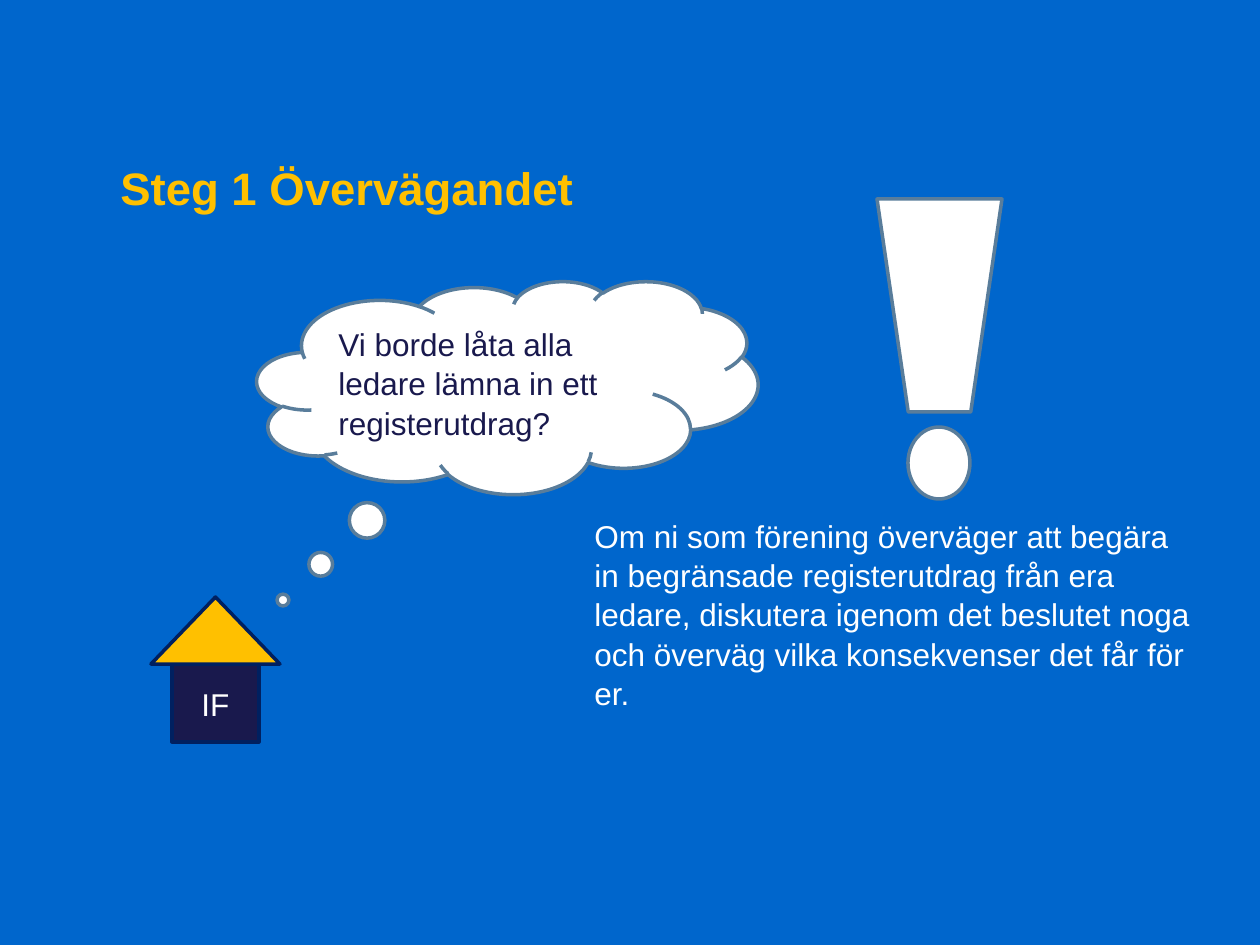
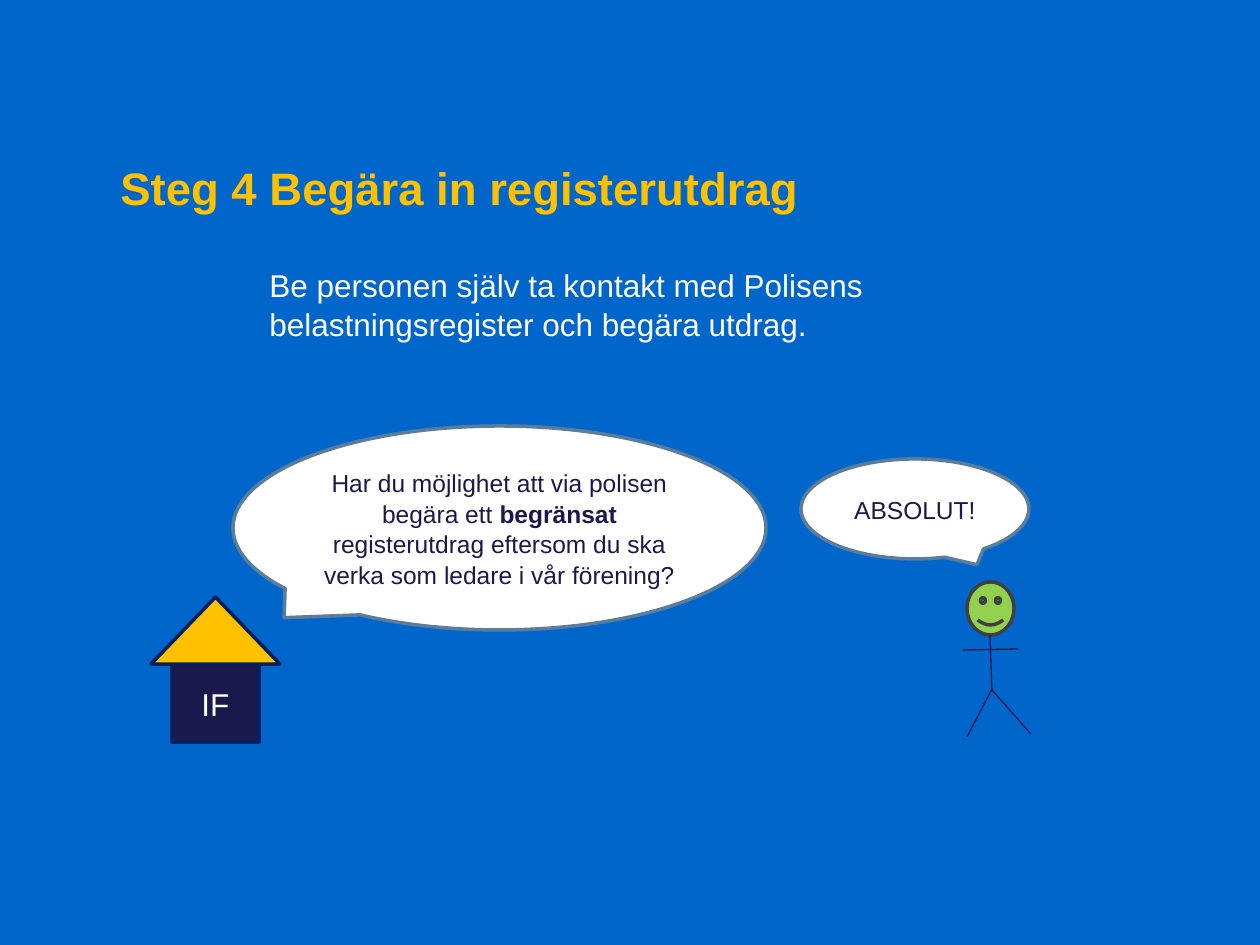
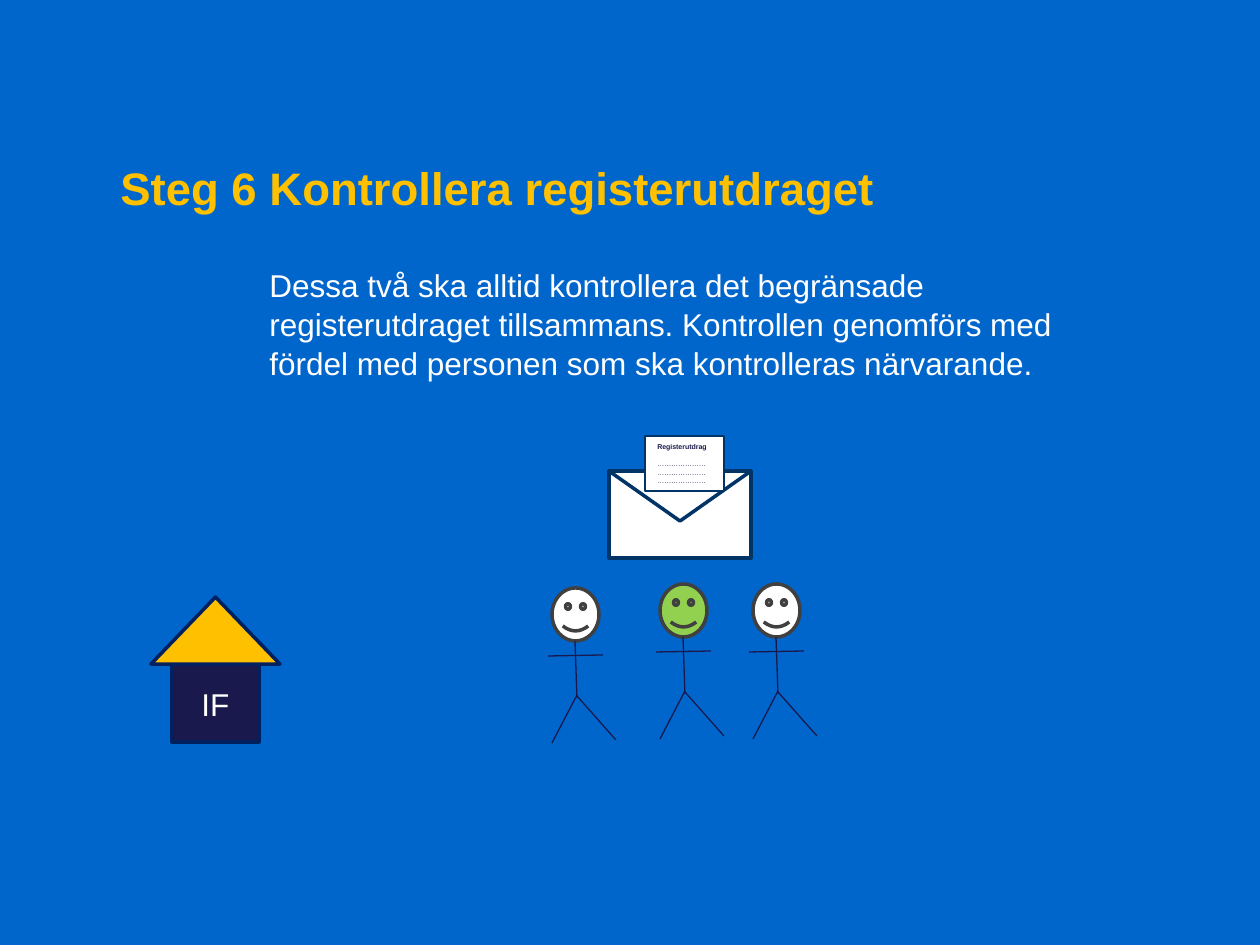
import lxml.etree
import pptx
import pptx.dml.color
import pptx.enum.shapes
import pptx.enum.text
import pptx.oxml.ns
import pptx.util

PX_PER_INCH = 126
SLIDE_BOX = (0, 0, 1260, 945)
TITLE_BOX = (108, 147, 984, 78)
HOUSE_BOX = (151, 597, 129, 145)

BLUE = "0066CC"
NAVY = "19194D"
HOUSE_EDGE = "002060"
YELLOW = "FFC000"
WHITE = "FFFFFF"
GREEN = "92D050"
STEEL = "597D9B"
GRAY = "404040"
ENVELOPE_EDGE = "003366"

LINE_SPACING = 1.04
FONT = "Arial"
BODY = {"size": 18, "color": WHITE}
TITLE = {"size": 26, "color": YELLOW, "bold": True}
THOUGHT = {"size": 18, "color": NAVY}
SPEECH = {"size": 14, "color": NAVY}

SHAPES = pptx.enum.shapes.MSO_SHAPE
ANCHORS = pptx.enum.text.MSO_ANCHOR
ALIGNMENTS = pptx.enum.text.PP_ALIGN


def px(length):
    return pptx.util.Emu(round(length * pptx.util.Inches(1) / PX_PER_INCH))


def color(hex_string):
    return pptx.dml.color.RGBColor.from_string(hex_string)


def write(shape, paragraphs, style, alignment=ALIGNMENTS.LEFT,
          anchor=ANCHORS.TOP, space_before=0):
    """Fill a shape with paragraphs, each a list of (text, format changes) runs."""
    frame = shape.text_frame
    frame.word_wrap = True
    frame.vertical_anchor = anchor
    for index, runs in enumerate(paragraphs):
        paragraph = frame.add_paragraph() if index else frame.paragraphs[0]
        paragraph.alignment = alignment
        paragraph.line_spacing = LINE_SPACING
        if index:
            paragraph.space_before = pptx.util.Pt(space_before)
        for text, changes in runs:
            run = paragraph.add_run()
            run.text = text
            values = {**style, **changes}
            run.font.color.rgb = color(values.pop("color"))
            values["size"] = pptx.util.Pt(values["size"])
            for name, value in {"name": FONT, **values}.items():
                setattr(run.font, name, value)


def add_outlined(shapes, kind, box, fill, edge, width=2, rotation=0, adjustments=()):
    shape = shapes.add_shape(kind, *map(px, box))
    shape.shadow.inherit = False
    shape.fill.solid()
    shape.fill.fore_color.rgb = color(fill)
    shape.line.color.rgb = color(edge)
    shape.line.width = pptx.util.Pt(width)
    shape.rotation = rotation
    for index, value in enumerate(adjustments):
        shape.adjustments[index] = value
    return shape


def add_limb(shapes, start, end):
    limb = shapes.add_connector(
        pptx.enum.shapes.MSO_CONNECTOR.STRAIGHT, *map(px, start + end))
    limb.line.color.rgb = color(NAVY)
    limb.line.width = pptx.util.Pt(0.75)
    properties = limb.element.find(pptx.oxml.ns.qn("p:spPr"))
    lxml.etree.SubElement(properties, pptx.oxml.ns.qn("a:effectLst"))


def add_text(slide, box, text, style=BODY, anchor=ANCHORS.TOP):
    text_box = slide.shapes.add_textbox(*map(px, box))
    write(text_box, [[(text, {})]], style, anchor=anchor)


def add_house(slide, box):
    left, top, width, height = box
    roof_height = 67
    wall_inset = 21
    shapes = slide.shapes.add_group_shape().shapes
    wall_box = (left + wall_inset, top + roof_height,
                width - 2 * wall_inset, height - roof_height)
    wall = add_outlined(shapes, SHAPES.RECTANGLE, wall_box, NAVY, HOUSE_EDGE)
    write(wall, [[("IF", {})]], BODY, ALIGNMENTS.CENTER, ANCHORS.MIDDLE)
    add_outlined(shapes, SHAPES.ISOSCELES_TRIANGLE,
                 (left, top, width, roof_height), YELLOW, HOUSE_EDGE)


def add_bubble(slide, kind, box, tail, runs, style, alignment=ALIGNMENTS.CENTER):
    bubble = add_outlined(slide.shapes, kind, box, WHITE, STEEL, adjustments=tail)
    write(bubble, [runs], style, alignment, ANCHORS.MIDDLE)


def add_exclamation_mark(slide, box):
    left, top, width, height = box
    dot_width, dot_height = 62, 72
    shapes = slide.shapes.add_group_shape().shapes
    add_outlined(shapes, SHAPES.TRAPEZOID, (left, top, width, 213),
                 WHITE, STEEL, rotation=180)
    dot_box = (left + (width - dot_width) // 2, top + height - dot_height,
               dot_width, dot_height)
    add_outlined(shapes, SHAPES.OVAL, dot_box, WHITE, STEEL)


def add_stick_figure(slide, left, top, face_color):
    shapes = slide.shapes.add_group_shape().shapes
    add_outlined(shapes, SHAPES.SMILEY_FACE, (left + 4, top, 47, 53), face_color, GRAY)
    limbs = {
        "spine": ((27, 53), (29, 110)),
        "left leg": ((29, 107), (4, 155)),
        "right leg": ((29, 108), (68, 152)),
        "arms": ((0, 68), (55, 67)),
    }
    for start, end in limbs.values():
        add_limb(shapes, (left + start[0], top + start[1]), (left + end[0], top + end[1]))


def add_envelope(slide, box):
    left, top, width, height = box
    paper_rise = 35
    shapes = slide.shapes.add_group_shape().shapes
    pocket_top = top + paper_rise
    add_outlined(shapes, SHAPES.RECTANGLE,
                 (left, pocket_top, width, height - paper_rise), WHITE, ENVELOPE_EDGE)
    add_outlined(shapes, SHAPES.ISOSCELES_TRIANGLE, (left, pocket_top, width, 50),
                 WHITE, ENVELOPE_EDGE, rotation=180)
    paper = add_outlined(shapes, SHAPES.RECTANGLE, (left + 36, top, 79, 55),
                         WHITE, ENVELOPE_EDGE, width=0.75)
    write(paper, [[("Registerutdrag", {"bold": True})], [("………………………………………………………", {})]],
          {"size": 4, "color": NAVY}, space_before=4.8)


def add_step_slide(presentation, title):
    """Add a slide with the background, title and house that every step shares."""
    slide = presentation.slides.add_slide(presentation.slide_layouts[6])
    slide.background.fill.solid()
    slide.background.fill.fore_color.rgb = color(BLUE)
    add_text(slide, TITLE_BOX, title, TITLE, ANCHORS.MIDDLE)
    add_house(slide, HOUSE_BOX)
    return slide


def build_consideration(presentation):
    slide = add_step_slide(presentation, "Steg 1 Övervägandet")
    add_bubble(slide, SHAPES.CLOUD_CALLOUT, (257, 281, 501, 213), (-0.448, 0.998),
               [("Vi borde låta alla ledare lämna in ett registerutdrag?", {})],
               THOUGHT, ALIGNMENTS.LEFT)
    add_text(slide, (582, 509, 630, 204),
             "Om ni som förening överväger att begära in begränsade registerutdrag "
             "från era ledare, diskutera igenom det beslutet noga och överväg vilka "
             "konsekvenser det får för er.")
    add_exclamation_mark(slide, (877, 199, 125, 300))


def build_request(presentation):
    slide = add_step_slide(presentation, "Steg 4 Begära in registerutdrag")
    add_text(slide, (257, 258, 869, 90),
             "Be personen själv ta kontakt med Polisens belastningsregister "
             "och begära utdrag.")
    question = [
        ("Har du möjlighet att via polisen begära ett ", {}),
        ("begränsat ", {"bold": True}),
        ("registerutdrag eftersom du ska verka som ledare i vår förening?", {}),
    ]
    add_bubble(slide, SHAPES.OVAL_CALLOUT, (233, 426, 533, 204), (-0.404, 0.44),
               question, SPEECH)
    add_stick_figure(slide, 963, 582, GREEN)
    add_bubble(slide, SHAPES.OVAL_CALLOUT, (801, 459, 228, 100), (0.272, 0.558),
               [("ABSOLUT!", {})], SPEECH)


def build_check(presentation):
    slide = add_step_slide(presentation, "Steg 6 Kontrollera registerutdraget")
    add_text(slide, (257, 258, 869, 127),
             "Dessa två ska alltid kontrollera det begränsade registerutdraget "
             "tillsammans. Kontrollen genomförs med fördel med personen som ska "
             "kontrolleras närvarande.")
    for left, top, face_color in [(749, 584, WHITE), (548, 588, WHITE), (656, 584, GREEN)]:
        add_stick_figure(slide, left, top, face_color)
    add_envelope(slide, (609, 436, 142, 122))


def main():
    presentation = pptx.Presentation()
    presentation.slide_width, presentation.slide_height = map(px, SLIDE_BOX[2:])
    for build in (build_consideration, build_request, build_check):
        build(presentation)
    presentation.save("out.pptx")


if __name__ == "__main__":
    main()
